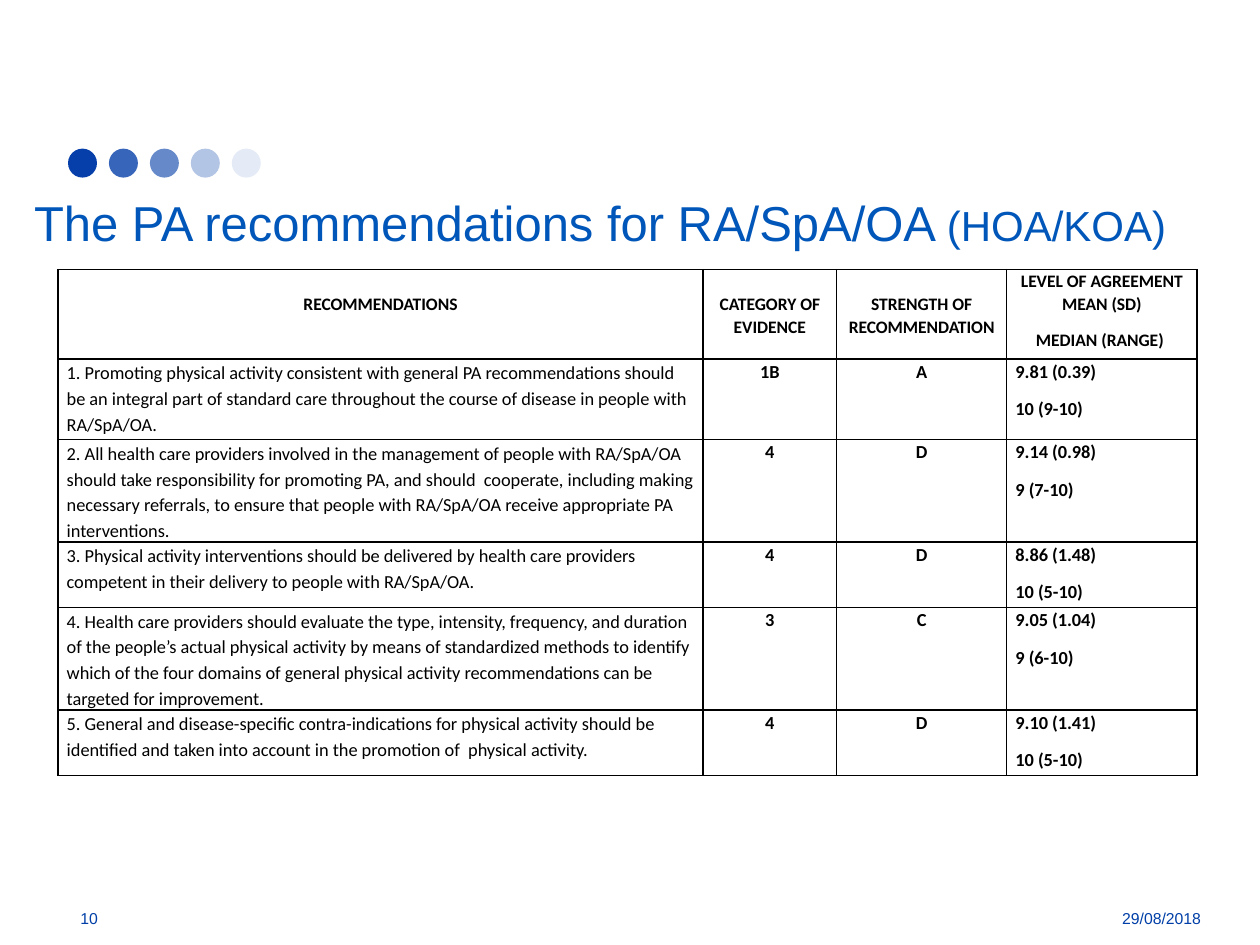
import pptx
import pptx.dml.color
import pptx.enum.shapes
import pptx.enum.text
import pptx.oxml.ns
import pptx.util
from lxml import etree
from pptx.util import Inches

TITLE_BLUE = pptx.dml.color.RGBColor(0x00, 0x56, 0xB9)
FOOTER_BLUE = pptx.dml.color.RGBColor(0x00, 0x3F, 0xA8)
DOT_BLUE = pptx.dml.color.RGBColor(0x06, 0x3F, 0xA9)
BLACK = pptx.dml.color.RGBColor(0x00, 0x00, 0x00)

ALIGN = pptx.enum.text.PP_ALIGN
ANCHOR = pptx.enum.text.MSO_ANCHOR

DOT_OPACITIES = [100, 80, 61, 30, 10]
COLUMN_WIDTHS = [5.12, 1.06, 1.35, 1.51]
ROW_HEIGHTS = [0.71, 0.64, 0.81, 0.52, 0.81, 0.52]
HEADINGS = [
    ["RECOMMENDATIONS"],
    ["CATEGORY OF EVIDENCE"],
    ["STRENGTH OF RECOMMENDATION"],
    ["LEVEL OF AGREEMENT MEAN (SD)", "MEDIAN (RANGE) "],
]
RECOMMENDATIONS = [
    ("1. Promoting physical activity consistent with general PA recommendations "
     "should be an integral part of standard care throughout the course of disease "
     "in people with RA/SpA/OA.",
     "1B", "A", "9.81 (0.39)", "10 (9-10)"),
    ("2. All health care providers involved in the management of people with "
     "RA/SpA/OA should take responsibility for promoting PA, and should  cooperate, "
     "including making necessary referrals, to ensure that people with RA/SpA/OA "
     "receive appropriate PA interventions.",
     "4", "D", "9.14 (0.98)", "9 (7-10)"),
    ("3. Physical activity interventions should be delivered by health care "
     "providers competent in their delivery to people with RA/SpA/OA.",
     "4", "D", "8.86 (1.48)", "10 (5-10)"),
    ("4. Health care providers should evaluate the type, intensity, frequency, and "
     "duration of the people’s actual physical activity by means of standardized "
     "methods to identify which of the four domains of general physical activity "
     "recommendations can be targeted for improvement.",
     "3", "C", "9.05 (1.04)", "9 (6-10)"),
    ("5. General and disease-specific contra-indications for physical activity "
     "should be identified and taken into account in the promotion of  physical "
     "activity.",
     "4", "D", "9.10 (1.41)", "10 (5-10)"),
]


def add_run(paragraph, text, size, color, font="Arial", bold=False):
    run = paragraph.add_run()
    run.text = text
    run.font.name = font
    run.font.size = pptx.util.Pt(size)
    run.font.bold = bold
    run.font.color.rgb = color


def add_dot(slide, left, opacity):
    dot = slide.shapes.add_shape(
        pptx.enum.shapes.MSO_SHAPE.OVAL,
        Inches(left), Inches(1.18), Inches(0.23), Inches(0.23))
    dot.shadow.inherit = False
    dot.line.fill.background()
    dot.fill.solid()
    dot.fill.fore_color.rgb = DOT_BLUE
    if opacity < 100:
        color = dot.fill._xPr.find(".//" + pptx.oxml.ns.qn("a:srgbClr"))
        etree.SubElement(color, pptx.oxml.ns.qn("a:alpha"), val=str(opacity * 1000))


def set_title(slide):
    title = slide.shapes.title
    title.left, title.top = Inches(0.17), Inches(1.42)
    title.width, title.height = Inches(9.72), Inches(0.69)
    frame = title.text_frame
    frame.word_wrap = True
    frame.vertical_anchor = ANCHOR.MIDDLE
    heading = frame.paragraphs[0]
    heading.alignment = ALIGN.LEFT
    add_run(heading, "The PA recommendations for RA/SpA/OA ", 28, TITLE_BLUE)
    add_run(heading, "(HOA/KOA)", 24, TITLE_BLUE)


def add_footer(slide, text, left, width, alignment):
    footer = slide.shapes.add_textbox(
        Inches(left), Inches(7.09), Inches(width), Inches(0.4))
    frame = footer.text_frame
    frame.word_wrap = True
    frame.vertical_anchor = ANCHOR.MIDDLE
    frame.paragraphs[0].alignment = alignment
    add_run(frame.paragraphs[0], text, 9, FOOTER_BLUE)


def add_borders(cell):
    properties = cell._tc.get_or_add_tcPr()
    for side in ("a:lnL", "a:lnR", "a:lnT", "a:lnB"):
        border = etree.SubElement(
            properties, pptx.oxml.ns.qn(side), w=str(pptx.util.Pt(1)))
        fill = etree.SubElement(border, pptx.oxml.ns.qn("a:solidFill"))
        etree.SubElement(fill, pptx.oxml.ns.qn("a:srgbClr"), val=str(BLACK))


def fill_cell(cell, lines, alignment=ALIGN.CENTER, size=10.5, bold=True,
              spacing=1.07, after=8, top=0):
    add_borders(cell)
    cell.fill.background()
    cell.margin_left = cell.margin_right = Inches(0.07)
    cell.margin_top, cell.margin_bottom = Inches(top), 0
    frame = cell.text_frame
    for index, line in enumerate(lines):
        paragraph = frame.add_paragraph() if index else frame.paragraphs[0]
        paragraph.alignment = alignment
        paragraph.line_spacing = spacing
        paragraph.space_after = pptx.util.Pt(after)
        add_run(paragraph, line, size, BLACK, "Calibri", bold)


def add_recommendations(slide):
    table = slide.shapes.add_table(
        len(ROW_HEIGHTS), len(COLUMN_WIDTHS), Inches(0.46), Inches(2.14),
        Inches(sum(COLUMN_WIDTHS)), Inches(sum(ROW_HEIGHTS))).table
    table.first_row = table.horz_banding = False
    for column, width in zip(table.columns, COLUMN_WIDTHS):
        column.width = Inches(width)
    for row, height in zip(table.rows, ROW_HEIGHTS):
        row.height = Inches(height)

    for column, lines in enumerate(HEADINGS):
        top = 0.18 if len(lines) == 1 else 0
        fill_cell(table.cell(0, column), lines, size=10, top=top)
    for row, (advice, evidence, strength, mean, median) in enumerate(RECOMMENDATIONS, 1):
        fill_cell(table.cell(row, 0), [advice], ALIGN.LEFT, bold=False,
                  spacing=1.15, after=0)
        fill_cell(table.cell(row, 1), [evidence])
        fill_cell(table.cell(row, 2), [strength])
        fill_cell(table.cell(row, 3), [mean, median], ALIGN.LEFT)


def main():
    deck = pptx.Presentation()
    deck.slide_width, deck.slide_height = Inches(10), Inches(7.5)
    slide = deck.slides.add_slide(deck.slide_layouts[5])
    for index, opacity in enumerate(DOT_OPACITIES):
        add_dot(slide, 0.54 + index * 0.325, opacity)
    add_recommendations(slide)
    add_footer(slide, "10", 0.54, 0.96, ALIGN.LEFT)
    add_footer(slide, "29/08/2018", 8.29, 1.34, ALIGN.RIGHT)
    set_title(slide)
    deck.save("out.pptx")


if __name__ == "__main__":
    main()
